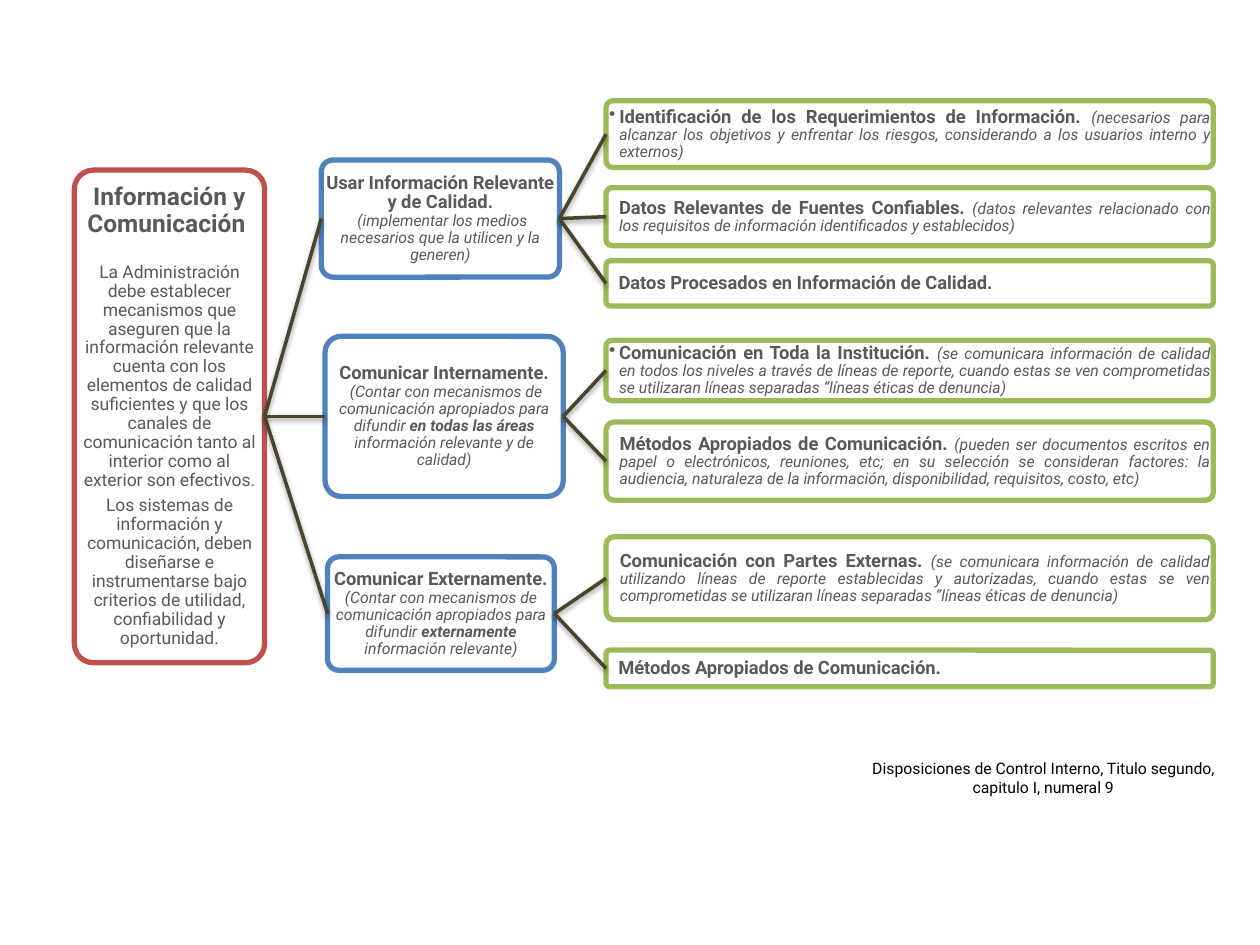
from lxml.etree import SubElement
from pptx import Presentation
from pptx.dml.color import RGBColor
from pptx.enum.shapes import MSO_CONNECTOR, MSO_SHAPE
from pptx.enum.text import MSO_ANCHOR, PP_ALIGN
from pptx.oxml.ns import qn
from pptx.util import Inches, Pt

COLORS = {
    "white": "FFFFFF", "text": "595959", "black": "000000", "link": "4A452A",
    "component": "C0504D", "principle": "4F81BD", "element": "9BBB59",
}
LEFT, RIGHT = 1, 3

COMPONENT = (
    "Información y Comunicación ",
    "La Administración debe establecer mecanismos que aseguren que la información "
    "relevante cuenta con los elementos de calidad suficientes y que los canales de "
    "comunicación tanto al interior como al exterior son efectivos.",
    "Los sistemas de información y comunicación, deben diseñarse e instrumentarse bajo "
    "criterios de utilidad, confiabilidad y oportunidad.",
)

# Principle: box, heading, (explanation, is bold) pieces, elements.
# Element: top, height, heading, explanation, has bullet.
PRINCIPLES = [
    ((2.55, 1.27, 1.89, 0.93), "Usar Información Relevante y de Calidad.",
     [(" (implementar los medios necesarios que la utilicen y la generen)", False)],
     [(0.8, 0.53, "Identificación de los Requerimientos de Información. ",
       "(necesarios para alcanzar los objetivos y enfrentar los riesgos, considerando a "
       "los usuarios interno y externos)", True),
      (1.49, 0.46, "Datos Relevantes de Fuentes Confiables. ",
       "(datos relevantes relacionado con los requisitos de información identificados y "
       "establecidos)", False),
      (2.07, 0.36, "Datos Procesados en Información de Calidad.", "", False)]),
    ((2.58, 2.67, 1.89, 1.27), "Comunicar Internamente.",
     [(" (Contar con mecanismos de comunicación apropiados para difundir ", False),
      ("en todas las áreas ", True), ("información relevante y de calidad)", False)],
     [(2.7, 0.48, "Comunicación en Toda la Institución. ",
       "(se comunicara información de calidad en todos los niveles a través de líneas de "
       "reporte, cuando estas se ven comprometidas se utilizaran líneas separadas "
       "“líneas éticas de denuncia)", True),
      (3.35, 0.62, "Métodos Apropiados de Comunicación. ",
       "(pueden ser documentos escritos en papel o electrónicos, reuniones, etc; en su "
       "selección se consideran factores: la audiencia, naturaleza de la información, "
       "disponibilidad, requisitos, costo, etc)", False)]),
    ((2.6, 4.42, 1.8, 0.9), "Comunicar Externamente. ",
     [("(Contar con mecanismos de comunicación apropiados para difundir ", False),
      ("externamente", True), (" información relevante)", False)],
     [(4.26, 0.66, "Comunicación con Partes Externas. ",
       "(se comunicara información de calidad utilizando líneas de reporte establecidas y "
       "autorizadas, cuando estas se ven comprometidas se utilizaran líneas separadas "
       "“líneas éticas de denuncia)", False),
      (5.16, 0.29, "Métodos Apropiados de Comunicación.", "", False)]),
]


class Diagram:
    font_name = "Roboto"
    heading_size, detail_size = 10.5, 9

    def __init__(self, slide):
        self.slide = slide

    def color(self, name):
        return RGBColor.from_string(COLORS[name])

    def box(self, bounds, outline):
        shape = self.slide.shapes.add_shape(
            MSO_SHAPE.ROUNDED_RECTANGLE, *(Inches(value) for value in bounds))
        shape.adjustments[0] = 0.1
        shape.shadow.inherit = False
        shape.fill.solid()
        shape.fill.fore_color.rgb = self.color("white")
        shape.line.color.rgb = self.color(outline)
        shape.line.width = Pt(3)
        frame = shape.text_frame
        frame.word_wrap = True
        frame.vertical_anchor = MSO_ANCHOR.MIDDLE
        frame.margin_left = frame.margin_right = Inches(0.01)
        frame.margin_top = frame.margin_bottom = Inches(0.01)
        return shape

    def style(self, font, size, bold=False, italic=False, color="text"):
        font.name = self.font_name
        font.size = Pt(size)
        font.bold = bold
        font.italic = italic
        font.color.rgb = self.color(color)

    def paragraph(self, frame, align=PP_ALIGN.CENTER):
        """Return the empty first paragraph, or a new one after the others."""
        first = frame.paragraphs[0]
        paragraph = frame.add_paragraph() if first.runs else first
        paragraph.alignment = align
        paragraph.line_spacing = 0.9
        return paragraph

    def run(self, paragraph, text, size, bold=False, italic=False):
        run = paragraph.add_run()
        run.text = text
        self.style(run.font, size, bold, italic)

    def component(self, bounds, heading, *details):
        shape = self.box(bounds, "component")
        title = self.paragraph(shape.text_frame)
        title.space_after = Pt(14.5)
        self.run(title, heading, 14, bold=True)
        for detail in details:
            paragraph = self.paragraph(shape.text_frame)
            paragraph.space_after = Pt(3.5)
            self.run(paragraph, detail, 10)
        return shape

    def principle(self, bounds, heading, details):
        shape = self.box(bounds, "principle")
        self.run(self.paragraph(shape.text_frame), heading, self.heading_size, bold=True)
        explanation = self.paragraph(shape.text_frame)
        for text, bold in details:
            self.run(explanation, text, self.detail_size, bold, italic=True)
        return shape

    def element(self, top, height, heading, detail, bullet):
        shape = self.box((4.81, top, 4.82, height), "element")
        paragraph = self.paragraph(shape.text_frame, PP_ALIGN.JUSTIFY)
        properties = paragraph._p.get_or_add_pPr()
        indent = Inches(0.08)
        properties.set("marL", str(indent))
        if bullet:
            properties.set("indent", str(-indent))
            SubElement(properties, qn("a:buChar"), char="•")
        self.run(paragraph, heading, self.heading_size, bold=True)
        if detail:
            self.run(paragraph, detail, self.detail_size, italic=True)
        return shape

    def link(self, parent, child):
        line = self.slide.shapes.add_connector(MSO_CONNECTOR.STRAIGHT, 0, 0, 0, 0)
        line.begin_connect(parent, RIGHT)
        line.end_connect(child, LEFT)
        line.line.color.rgb = self.color("link")
        line.line.width = Pt(2)
        effects = SubElement(line._element.spPr, qn("a:effectLst"))
        shadow = SubElement(effects, qn("a:outerShdw"), blurRad=str(Pt(3.1)),
                            dist=str(Pt(1.6)), dir="5400000", rotWithShape="0")
        shade = SubElement(shadow, qn("a:srgbClr"), val=COLORS["black"])
        SubElement(shade, qn("a:alpha"), val="38000")

    def citation(self, bounds, text):
        textbox = self.slide.shapes.add_textbox(*(Inches(value) for value in bounds))
        textbox.text_frame.word_wrap = True
        paragraph = textbox.text_frame.paragraphs[0]
        paragraph.text = text
        paragraph.alignment = PP_ALIGN.CENTER
        self.style(paragraph.font, 9, color="black")


def main():
    presentation = Presentation()
    presentation.slide_width, presentation.slide_height = Inches(10), Inches(7.5)
    blank_layout = presentation.slide_layouts[6]
    diagram = Diagram(presentation.slides.add_slide(blank_layout))

    component = diagram.component((0.59, 1.35, 1.51, 3.91), *COMPONENT)
    for bounds, heading, details, elements in PRINCIPLES:
        principle = diagram.principle(bounds, heading, details)
        diagram.link(component, principle)
        for element in elements:
            diagram.link(principle, diagram.element(*element))
    diagram.citation((6.76, 5.97, 3.04, 0.4),
                     "Disposiciones de Control Interno, Titulo segundo, capitulo I, numeral 9")
    presentation.save("out.pptx")


if __name__ == "__main__":
    main()
